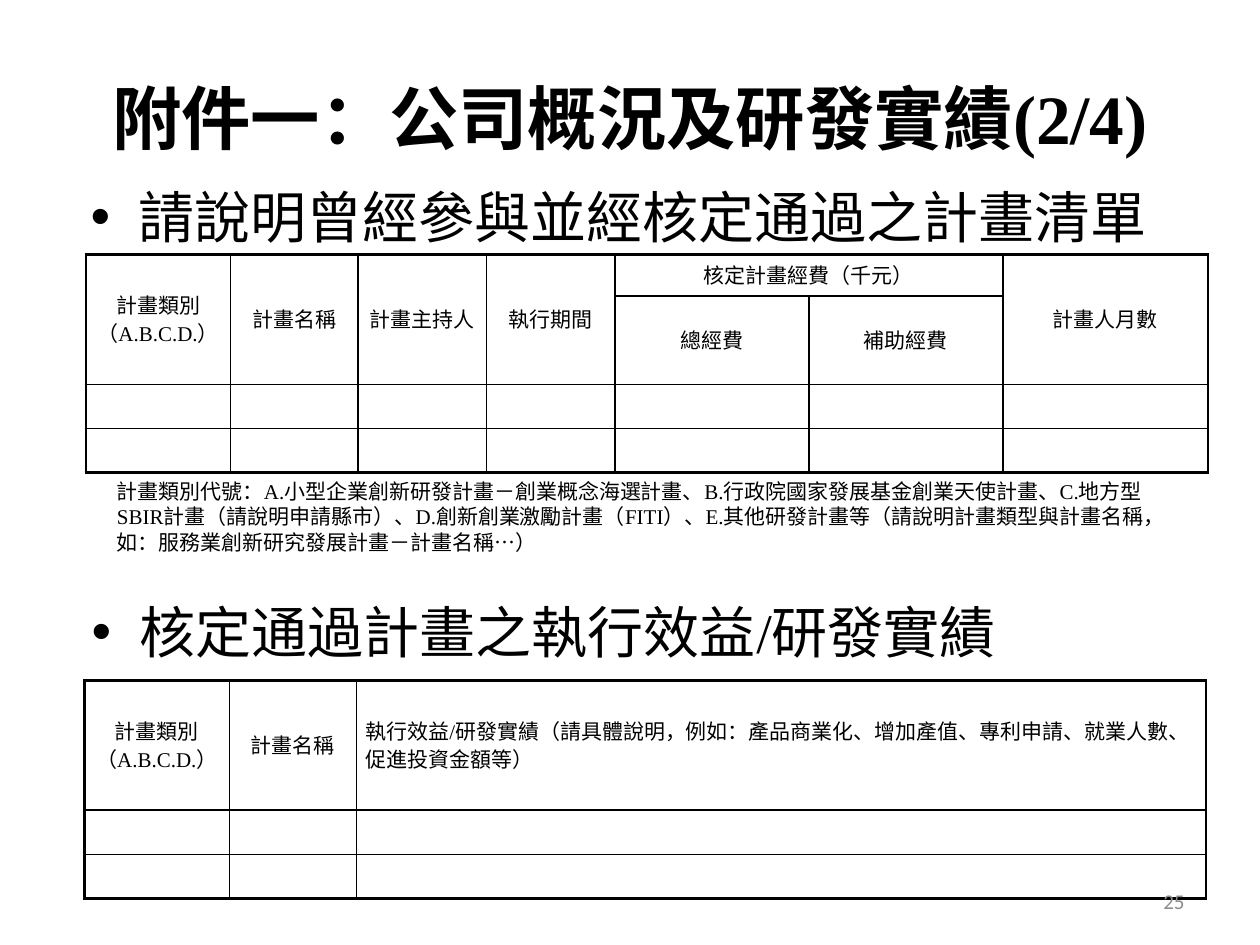
from lxml.etree import SubElement
from pptx import Presentation
from pptx.dml.color import RGBColor
from pptx.enum.text import MSO_ANCHOR, MSO_AUTO_SIZE, PP_ALIGN
from pptx.oxml.ns import qn
from pptx.util import Inches, Pt

COLORS = {"ink": "000000", "page_number": "8C8C8C"}
SERIF = "Times New Roman"
CATEGORY = "計畫類別\n（A.B.C.D.）"


def style(para, size, color="ink", name=SERIF, align=None):
    para.font.size = Pt(size)
    para.font.name = name
    para.font.color.rgb = RGBColor.from_string(COLORS[color])
    if align is not None:
        para.alignment = align


def place(shape, box):
    shape.left, shape.top, shape.width, shape.height = map(Inches, box)


def add_text(page, box, text):
    shape = page.shapes.add_textbox(*map(Inches, box))
    shape.text_frame.word_wrap = True
    para = shape.text_frame.paragraphs[0]
    para.text = text
    return shape.text_frame, para


def add_title(page, box, text):
    title = page.shapes.title
    place(title, box)
    title.text_frame.vertical_anchor = MSO_ANCHOR.MIDDLE
    para = title.text_frame.paragraphs[0]
    para.text = text
    style(para, 39.6, align=PP_ALIGN.CENTER)
    para.font.bold = True


def add_body(page, box, text):
    body = page.placeholders[1]
    place(body, box)
    para = body.text_frame.paragraphs[0]
    para.text = text
    para.space_before = Pt(0)
    style(para, 32)


def add_bullet_text(page, box, text):
    para = add_text(page, box, text)[1]
    properties = para._p.get_or_add_pPr()
    properties.set("marL", str(Inches(0.38)))
    properties.set("indent", str(-Inches(0.38)))
    SubElement(properties, qn("a:buFont")).set("typeface", "Arial")
    SubElement(properties, qn("a:buChar")).set("char", "•")
    style(para, 32)


def add_note(page, box, text):
    frame, para = add_text(page, box, text)
    frame.auto_size = MSO_AUTO_SIZE.SHAPE_TO_FIT_TEXT
    style(para, 12)


def add_page_number(page, box, text):
    frame, para = add_text(page, box, text)
    frame.vertical_anchor = MSO_ANCHOR.MIDDLE
    style(para, 12, "page_number", "Calibri", PP_ALIGN.RIGHT)


def set_borders(cell, outer_edges):
    """Draw outer edges at 1.5 pt and inner edges at 1 pt."""
    properties = cell._tc.get_or_add_tcPr()
    for edge, is_outer in zip(("lnL", "lnR", "lnT", "lnB"), outer_edges):
        line = SubElement(properties, qn(f"a:{edge}"))
        line.set("w", str(Pt(1.5 if is_outer else 1)))
        fill = SubElement(line, qn("a:solidFill"))
        SubElement(fill, qn("a:srgbClr")).set("val", COLORS["ink"])


def add_grid(page, left, top, widths, heights, texts, merges=()):
    """Place a ruled table; texts maps (row, column) to wording."""
    box = (left, top, sum(widths), sum(heights))
    table = page.shapes.add_table(
        len(heights), len(widths), *map(Inches, box)).table
    table.first_row = table.horz_banding = False
    for column, width in zip(table.columns, widths):
        column.width = Inches(width)
    for row, height in zip(table.rows, heights):
        row.height = Inches(height)
    last_row, last_column = len(heights) - 1, len(widths) - 1
    for row in range(len(heights)):
        for column in range(len(widths)):
            cell = table.cell(row, column)
            set_borders(cell, (column == 0, column == last_column,
                               row == 0, row == last_row))
            cell.fill.background()
            cell.vertical_anchor = MSO_ANCHOR.MIDDLE
            cell.margin_left = cell.margin_right = Inches(0.07)
            cell.margin_top = cell.margin_bottom = 0
            cell.text = texts.get((row, column), "")
            for para in cell.text_frame.paragraphs:
                para.line_spacing = Pt(16)
                style(para, 12, align=PP_ALIGN.CENTER)
    for first, last in merges:
        table.cell(*first).merge(table.cell(*last))
    return table


def add_project_table(page, left, top):
    texts = {
        (0, 0): CATEGORY, (0, 1): "計畫名稱", (0, 2): "計畫主持人",
        (0, 3): "執行期間", (0, 4): "核定計畫經費（千元）",
        (0, 6): "計畫人月數", (1, 4): "總經費", (1, 5): "補助經費",
    }
    merges = [((0, column), (1, column)) for column in (0, 1, 2, 3, 6)]
    merges.append(((0, 4), (0, 5)))
    add_grid(page, left, top, (1.15, 1.01, 1.02, 1.02, 1.54, 1.54, 1.63),
             (0.33, 0.7, 0.35, 0.35), texts, merges)


def add_results_table(page, left, top):
    texts = {(0, 0): CATEGORY, (0, 1): "計畫名稱", (0, 2): "執行效益/研發實績"}
    table = add_grid(page, left, top, (1.15, 1.01, 6.74),
                     (1.03, 0.35, 0.35), texts)
    para = table.cell(0, 2).text_frame.paragraphs[0]
    para.alignment = PP_ALIGN.LEFT
    span = para.add_run()
    span.text = "（請具體說明，例如：產品商業化、增加產值、專利申請、就業人數、促進投資金額等）"
    span.font.name = "Noto Sans CJK SC"


def main():
    deck = Presentation()
    deck.slide_width, deck.slide_height = Inches(10), Inches(7.5)
    page = deck.slides.add_slide(deck.slide_layouts[1])

    # Heading
    add_title(page, (0.5, 0.3, 9, 1.25), "附件一：公司概況及研發實績(2/4)")

    # Approved projects
    add_body(page, (0.62, 1.4, 9, 3.7), "請說明曾經參與並經核定通過之計畫清單")
    add_project_table(page, 0.68, 2.02)
    add_note(page, (0.83, 3.75, 8.58, 0.71),
             "計畫類別代號：A.小型企業創新研發計畫－創業概念海選計畫、"
             "B.行政院國家發展基金創業天使計畫、"
             "C.地方型SBIR計畫（請說明申請縣市）、"
             "D.創新創業激勵計畫（FITI）、"
             "E.其他研發計畫等（請說明計畫類型與計畫名稱，"
             "如：服務業創新研究發展計畫－計畫名稱…）")

    # Results of the projects
    add_bullet_text(page, (0.63, 4.69, 9, 2.52), "核定通過計畫之執行效益/研發實績")
    add_results_table(page, 0.67, 5.4)

    # Page number
    add_page_number(page, (7.17, 6.95, 2.33, 0.4), "25")
    deck.save("out.pptx")


if __name__ == "__main__":
    main()
